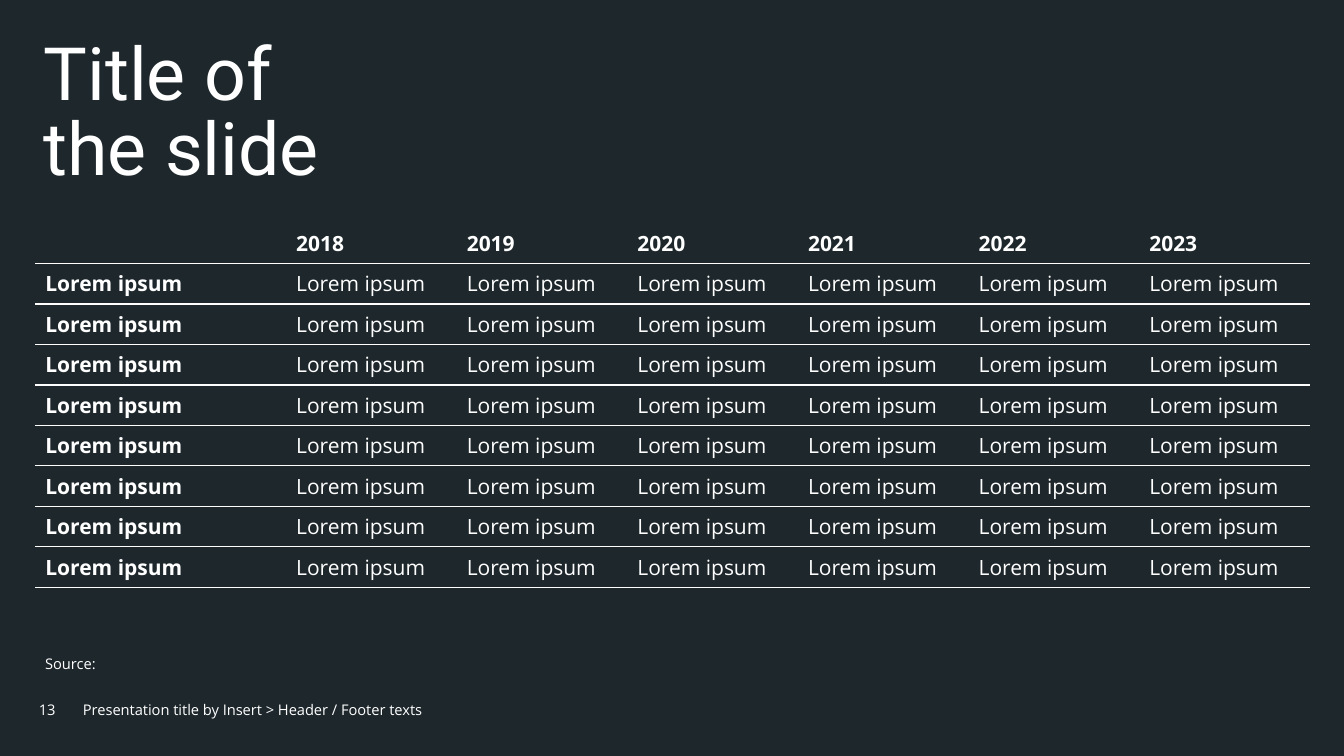
from lxml.etree import SubElement
from pptx import Presentation
from pptx.dml.color import RGBColor
from pptx.enum.text import MSO_ANCHOR as Anchor, MSO_AUTO_SIZE as AutoSize, PP_ALIGN as Align
from pptx.oxml.ns import qn
from pptx.util import Cm, Pt

WHITE = RGBColor(0xFF, 0xFF, 0xFF)
BACKGROUND = RGBColor(0x1E, 0x27, 0x2C)
TITLE_FONT = "Roboto"
BODY_FONT = "Open Sans"
TITLE_ONLY = 5

YEARS = [str(year) for year in range(2018, 2024)]
ENTRY = "Lorem ipsum"
ENTRY_ROWS = 8
LABEL_WIDTH, YEAR_WIDTH, ROW_HEIGHT = 6.32, 4.3, 1.02


class DarkSlide:
    def __init__(self, deck):
        self.page = deck.slides.add_slide(deck.slide_layouts[TITLE_ONLY])
        fill = self.page.background.fill
        fill.solid()
        fill.fore_color.rgb = BACKGROUND

    def style(self, frame, size, font=BODY_FONT, bold=False, align=Align.LEFT, spacing=1.0):
        for para in frame.paragraphs:
            para.alignment = align
            para.line_spacing = spacing
            for span in para.runs:
                span.font.name = font
                span.font.size = Pt(size)
                span.font.bold = bold
                span.font.color.rgb = WHITE

    def title(self, text, left, top, width, height):
        box = self.page.shapes.title
        box.left, box.top, box.width, box.height = Cm(left), Cm(top), Cm(width), Cm(height)
        frame = box.text_frame
        frame.text = text
        frame.auto_size = AutoSize.NONE
        frame.vertical_anchor = Anchor.TOP
        frame.margin_top = Cm(0.25)
        self.style(frame, 52.5, TITLE_FONT, spacing=0.85)

    def small_text(self, text, left, top, width, height, anchor=Anchor.MIDDLE, **style):
        box = self.page.shapes.add_textbox(Cm(left), Cm(top), Cm(width), Cm(height))
        frame = box.text_frame
        frame.word_wrap = True
        frame.vertical_anchor = anchor
        frame.text = text
        self.style(frame, 10.5, **style)

    def rule(self, cell, ruled_sides):
        """Draw white lines on the given sides of a cell and clear the others."""
        properties = cell._tc.get_or_add_tcPr()
        for side in "LRTB":
            line = SubElement(properties, qn(f"a:ln{side}"), w=str(Pt(1)))
            if side in ruled_sides:
                fill = SubElement(line, qn("a:solidFill"))
                SubElement(fill, qn("a:srgbClr"), val=str(WHITE))
            else:
                SubElement(line, qn("a:noFill"))

    def table(self, rows, left, top, widths, row_height):
        table = self.page.shapes.add_table(
            len(rows), len(widths), Cm(left), Cm(top),
            Cm(sum(widths)), Cm(row_height * len(rows))).table
        table.first_row = table.horz_banding = False
        for column, width in zip(table.columns, widths):
            column.width = Cm(width)
        for row_index, texts in enumerate(rows):
            table.rows[row_index].height = Cm(row_height)
            for column_index, text in enumerate(texts):
                cell = table.cell(row_index, column_index)
                cell.text = text
                cell.vertical_anchor = Anchor.MIDDLE
                self.rule(cell, "TB" if row_index else "B")
                cell.fill.background()
                heading = row_index == 0 or column_index == 0
                self.style(cell.text_frame, 15, bold=heading)


def main():
    deck = Presentation()
    deck.slide_width, deck.slide_height = Cm(33.87), Cm(19.05)
    slide = DarkSlide(deck)
    slide.title("Title of\vthe slide", 0.84, 0.76, 32.2, 3.89)
    rows = [["", *YEARS]] + [[ENTRY] * (len(YEARS) + 1)] * ENTRY_ROWS
    widths = [LABEL_WIDTH] + [YEAR_WIDTH] * len(YEARS)
    slide.table(rows, 0.89, 5.61, widths, ROW_HEIGHT)
    slide.small_text("Source:", 0.89, 16.28, 32.1, 0.71, Anchor.TOP, spacing=1.2)
    slide.small_text("Presentation title by Insert > Header / Footer texts",
                     1.84, 17.37, 27.7, 1.02)
    slide.small_text("13", 0, 17.37, 1.65, 1.02, align=Align.RIGHT)
    deck.save("out.pptx")


if __name__ == "__main__":
    main()
